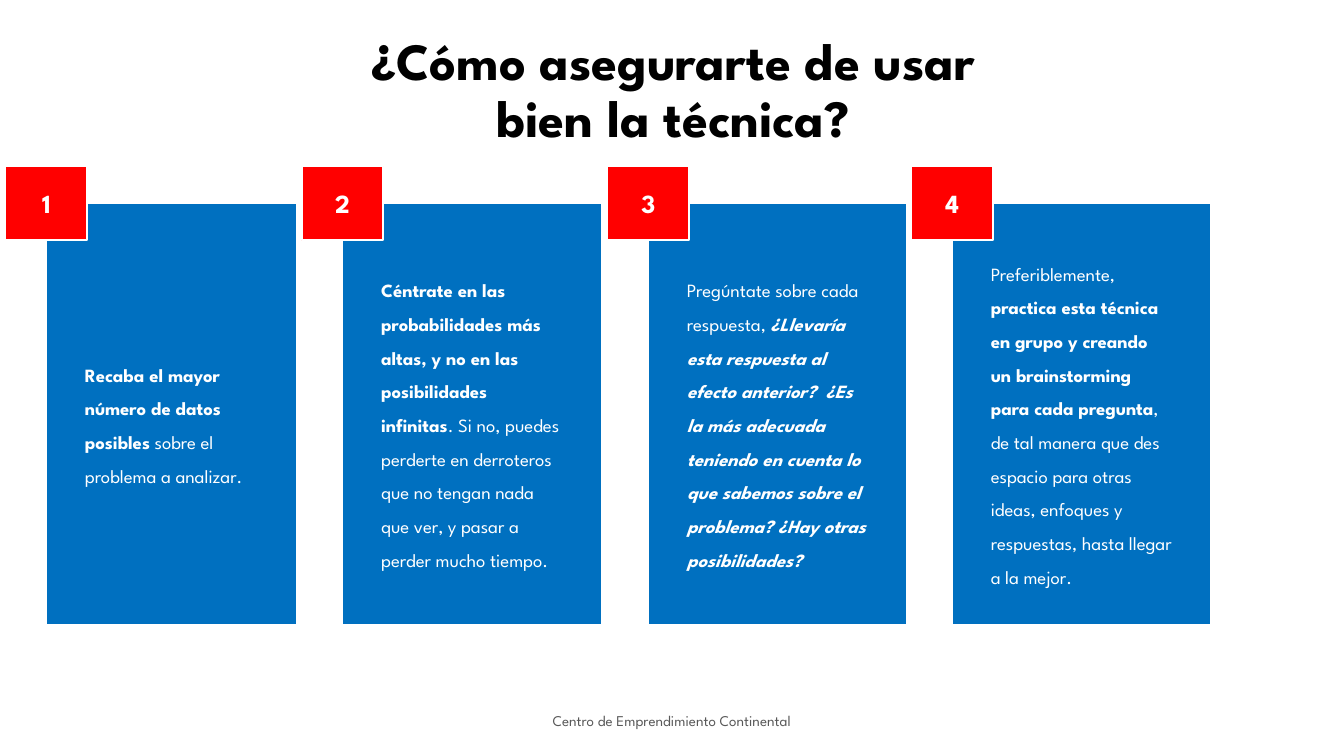
from lxml import etree
from pptx import Presentation
from pptx.dml.color import RGBColor
from pptx.enum.shapes import MSO_SHAPE
from pptx.enum.text import MSO_ANCHOR, MSO_AUTO_SIZE, PP_ALIGN
from pptx.oxml.ns import qn
from pptx.util import Pt

RECT = MSO_SHAPE.RECTANGLE
MIDDLE = MSO_ANCHOR.MIDDLE
FIXED = MSO_AUTO_SIZE.NONE
LEFT, CENTER = PP_ALIGN.LEFT, PP_ALIGN.CENTER
FACE = "League Spartan"
WHITE, BLACK, GRAY, BLUE, RED = "FFFFFF", "000000", "595959", "0070C0", "FF0000"
PLAIN, BOLD, SLANT = {"bold": False}, {"bold": True}, {"bold": True, "italic": True}

CARDS = [
    (2.9, 134.6, [
        ("Recaba el mayor número de datos posibles", BOLD),
        (" sobre el problema a analizar.", PLAIN)]),
    (161.6, 138.8, [
        ("Céntrate en las probabilidades más altas, y no en las posibilidades infinitas", BOLD),
        (". Si no, puedes perderte en derroteros que no tengan nada que ver, "
         "y pasar a perder mucho tiempo.", PLAIN)]),
    (325.4, 138.8, [
        ("Pregúntate sobre cada respuesta, ", PLAIN),
        ("¿Llevaría esta respuesta al efecto anterior?  ¿Es la más adecuada teniendo en cuenta "
         "lo que sabemos sobre el problema? ¿Hay otras posibilidades?", SLANT)]),
    (488.2, 138.8, [
        ("Preferiblemente, ", PLAIN),
        ("practica esta técnica en grupo y creando un brainstorming para cada pregunta", BOLD),
        (", de tal manera que des espacio para otras ideas, enfoques y respuestas, "
         "hasta llegar a la mejor.", PLAIN)]),
]


def color(fmt, code):
    fmt.rgb = RGBColor.from_string(code)


def assign(item, values):
    for name, value in values.items():
        setattr(item, name, value)


def place(shape, box):
    assign(shape, dict(zip(("left", "top", "width", "height"), map(Pt, box))))


def write(shape, parts, size, code, align=CENTER, space=1.0, pads=(7.2, 3.6, 7.2, 3.6)):
    frame = shape.text_frame
    names = ("margin_left", "margin_top", "margin_right", "margin_bottom")
    assign(frame, {"word_wrap": True, "auto_size": FIXED, "vertical_anchor": MIDDLE})
    assign(frame, dict(zip(names, map(Pt, pads))))
    para = frame.paragraphs[0]
    assign(para, {"alignment": align, "line_spacing": space})
    for text, style in parts:
        for index, line in enumerate(text.split("\n")):
            if index:
                para.add_line_break()
            run = para.add_run()
            run.text = line
            assign(run.font, {"name": FACE, "size": Pt(size), **style})
            color(run.font.color, code)
    for gap in shape._element.iter(qn("a:br")):
        etree.SubElement(gap, qn("a:rPr")).set("sz", str(size * 100))


def block(slide, box, code):
    shape = slide.shapes.add_shape(RECT, *map(Pt, box))
    shape.shadow.inherit = False
    shape.fill.solid()
    color(shape.fill.fore_color, code)
    color(shape.line.color, WHITE)
    shape.line.width = Pt(1)
    return shape


def title(slide, box):
    shape = slide.shapes.title
    place(shape, box)
    write(shape, [("¿Cómo asegurarte de usar\nbien la técnica?", BOLD)], 28, BLACK, space=0.9)


def footer(slide, box):
    shape = slide.shapes.add_textbox(*map(Pt, box))
    write(shape, [("Centro de Emprendimiento Continental", PLAIN)], 8, GRAY)


def card(slide, box, number, parts):
    left, top, width, height = box
    body = block(slide, (left + 21.9, top + 19.6, width, height - 19.6), BLUE)
    write(body, parts, 10, WHITE, LEFT, 1.5, (20.7, 26.6, 20.7, 20.7))
    badge = block(slide, (left, top, 43.8, 39.6), RED)
    write(badge, [(str(number), BOLD)], 14, WHITE)


def main():
    deck = Presentation()
    deck.slide_width, deck.slide_height = Pt(720), Pt(405)
    slide = deck.slides.add_slide(deck.slide_layouts[5])
    title(slide, (50.2, 10, 620.6, 78.5))
    footer(slide, (238.4, 375.3, 243.2, 21.6))
    for number, (left, width, parts) in enumerate(CARDS, 1):
        card(slide, (left, 89.2, width, 245.6), number, parts)
    deck.save("out.pptx")


if __name__ == "__main__":
    main()
